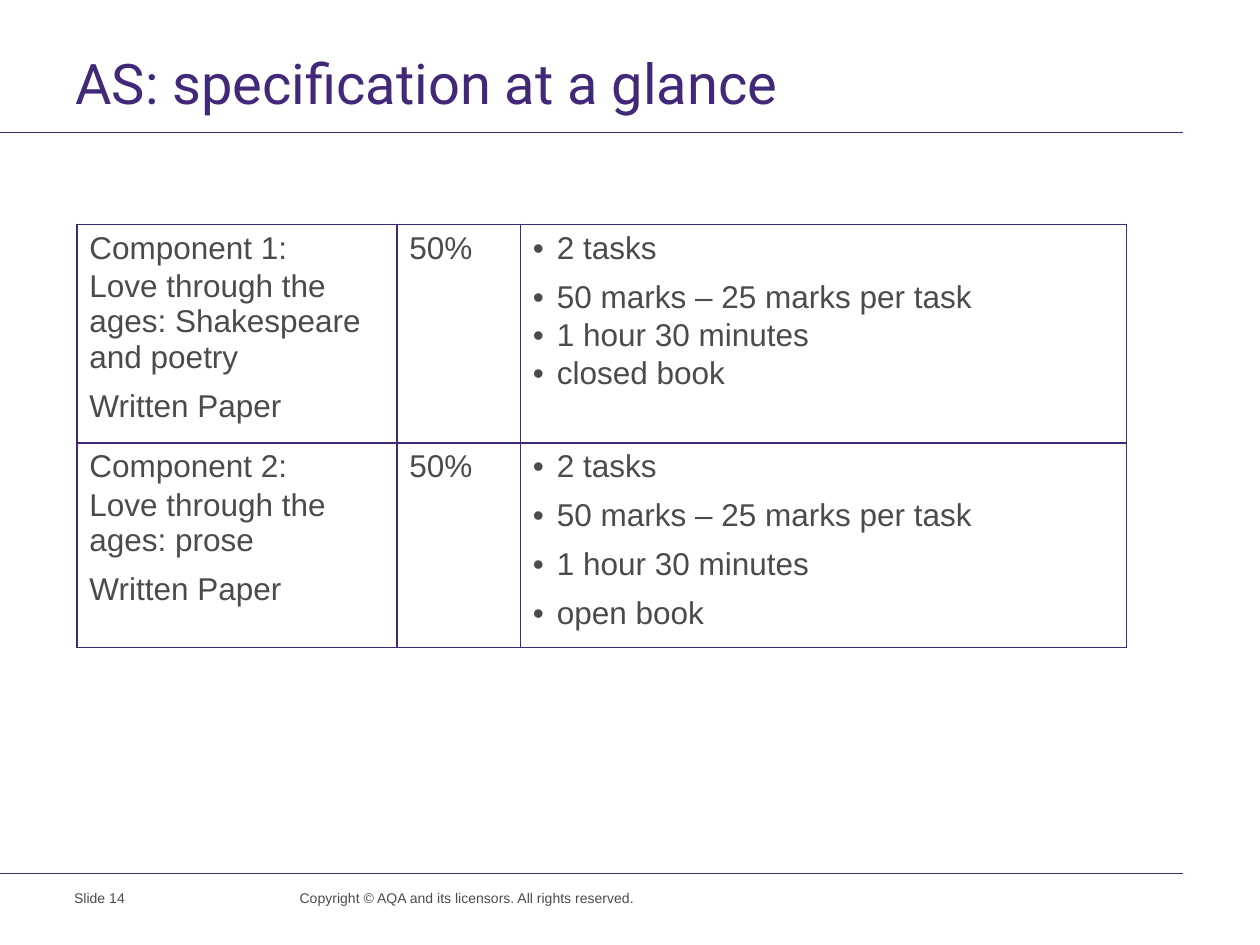
from lxml.etree import SubElement
from pptx import Presentation
from pptx.dml.color import RGBColor
from pptx.enum.shapes import MSO_CONNECTOR
from pptx.enum.text import MSO_ANCHOR
from pptx.oxml.ns import qn
from pptx.util import Inches, Pt

COLORS = {"purple": "412878", "gray": "4B4B4B"}
TITLE = "AS: specification at a glance"
COPYRIGHT = "Copyright © AQA and its licensors. All rights reserved."
SLIDE_LABEL = "Slide 14"
RULES = [1.05, 6.93]
COLUMN_WIDTHS = [2.54, 0.98, 4.81]
ROW_HEIGHTS = [1.63, 1.57]
GAP = 6
COMPONENTS = [
    (
        [("Component 1:", 0),
         ("Love through the ages: Shakespeare and poetry", GAP),
         ("Written Paper", 0)],
        [("50%", 0)],
        [("2 tasks", GAP), ("50 marks – 25 marks per task", 0),
         ("1 hour 30 minutes", 0), ("closed book", 0)],
    ),
    (
        [("Component 2:", 0),
         ("Love through the ages: prose", GAP),
         ("Written Paper", 0)],
        [("50%", 0)],
        [("2 tasks", GAP), ("50 marks – 25 marks per task", GAP),
         ("1 hour 30 minutes", GAP), ("open book", GAP)],
    ),
]
BULLET_COLUMN = 2


def color(name):
    return RGBColor.from_string(COLORS[name])


def add_span(para, text, size, font, color_name):
    span = para.add_run()
    span.text = text
    span.font.size = Pt(size)
    span.font.name = font
    span.font.color.rgb = color(color_name)


def add_text(page, area, text, size, font="Arial", color_name="gray"):
    box = page.shapes.add_textbox(*map(Inches, area))
    box.text_frame.word_wrap = True
    add_span(box.text_frame.paragraphs[0], text, size, font, color_name)
    return box.text_frame


def add_rule(page, top):
    rule = page.shapes.add_connector(
        MSO_CONNECTOR.STRAIGHT, 0, Inches(top), Inches(9.39), Inches(top))
    rule.line.color.rgb = color("purple")
    rule.line.width = Pt(0.6)
    SubElement(rule._element.spPr, qn("a:effectLst"))


def add_bullet(para):
    properties = para._p.get_or_add_pPr()
    properties.set("marL", str(Inches(0.19)))
    properties.set("indent", str(-Inches(0.19)))
    bullet_color = SubElement(properties, qn("a:buClr"))
    SubElement(bullet_color, qn("a:srgbClr"), val=COLORS["gray"])
    SubElement(properties, qn("a:buFont"), typeface="Arial")
    SubElement(properties, qn("a:buChar"), char="•")


def style_cell(cell):
    properties = cell._tc.get_or_add_tcPr()
    for side in ("lnL", "lnR", "lnT", "lnB"):
        border = SubElement(properties, qn(f"a:{side}"), w=str(Pt(1)))
        fill = SubElement(border, qn("a:solidFill"))
        SubElement(fill, qn("a:srgbClr"), val=COLORS["purple"])
    cell.fill.background()


def fill_cell(cell, lines, bulleted):
    style_cell(cell)
    frame = cell.text_frame
    for index, (text, gap) in enumerate(lines):
        para = frame.add_paragraph() if index else frame.paragraphs[0]
        if bulleted:
            add_bullet(para)
        if index:
            para.space_before = Pt(1.8)
        para.space_after = Pt(gap)
        add_span(para, text, 18, "Arial", "gray")


def add_components(page):
    frame = page.shapes.add_table(
        len(ROW_HEIGHTS), len(COLUMN_WIDTHS), Inches(0.61), Inches(1.78),
        Inches(sum(COLUMN_WIDTHS)), Inches(sum(ROW_HEIGHTS)))
    table = frame.table
    table.first_row = False
    table.horz_banding = False
    for column, width in zip(table.columns, COLUMN_WIDTHS):
        column.width = Inches(width)
    for row, height, component in zip(table.rows, ROW_HEIGHTS, COMPONENTS):
        row.height = Inches(height)
        for index, (cell, lines) in enumerate(zip(row.cells, component)):
            fill_cell(cell, lines, index == BULLET_COLUMN)


def main():
    deck = Presentation()
    deck.slide_width, deck.slide_height = Inches(10), Inches(7.5)
    page = deck.slides.add_slide(deck.slide_layouts[6])
    for top in RULES:
        add_rule(page, top)
    title = add_text(page, (0.5, 0.44, 9.5, 0.48), TITLE, 32, "Roboto", "purple")
    title.paragraphs[0].line_spacing = Pt(28)
    title.vertical_anchor = MSO_ANCHOR.BOTTOM
    title.margin_bottom = 0
    add_text(page, (2.28, 7.01, 2.93, 0.26), COPYRIGHT, 8)
    add_components(page)
    add_text(page, (0.49, 7.01, 1.56, 0.38), SLIDE_LABEL, 8)
    deck.save("out.pptx")


if __name__ == "__main__":
    main()
